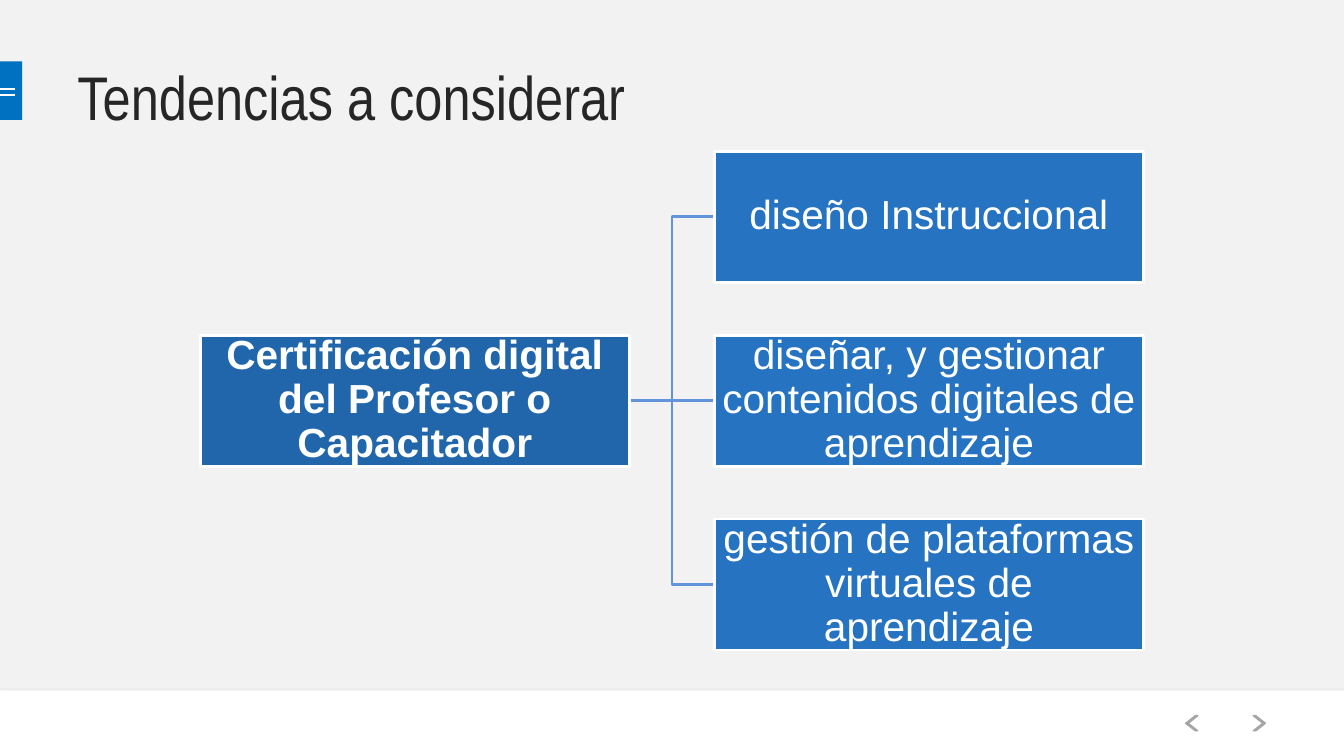
from lxml.etree import SubElement
from pptx import Presentation
from pptx.dml.color import RGBColor
from pptx.enum.shapes import MSO_CONNECTOR, MSO_SHAPE
from pptx.enum.text import MSO_ANCHOR, PP_ALIGN
from pptx.oxml import parse_xml
from pptx.oxml.ns import nsdecls, qn
from pptx.util import Inches, Pt

BACKGROUND = RGBColor(0xF2, 0xF2, 0xF2)
WHITE = RGBColor(0xFF, 0xFF, 0xFF)
TITLE_COLOR = RGBColor(0x26, 0x26, 0x26)
TAB_BLUE = RGBColor(0x00, 0x70, 0xC0)
ROOT_BLUE = RGBColor(0x21, 0x66, 0xAB)
BRANCH_BLUE = RGBColor(0x25, 0x73, 0xC1)
LINK_BLUE = RGBColor(0x63, 0x93, 0xDA)
CHEVRON_FILL = RGBColor(0x2E, 0x79, 0x74)
CHEVRON_LINE = RGBColor(0xA6, 0xA6, 0xA6)

BOX_WIDTH, BOX_HEIGHT = 4.25, 1.3
ROOT_TEXT = "Certificación digital del Profesor o Capacitador"
BRANCH_TEXTS = [
    "diseño Instruccional",
    "diseñar, y gestionar contenidos digitales de aprendizaje",
    "gestión de plataformas virtuales de aprendizaje",
]
FOOTER_SHADOW = (
    f'<a:effectLst {nsdecls("a")}><a:outerShdw blurRad="39370" dist="22860" dir="5400000" '
    'rotWithShape="0"><a:srgbClr val="808080"><a:alpha val="35000"/></a:srgbClr>'
    '</a:outerShdw></a:effectLst>'
)


def add_block(slide, kind, left, top, width, height, fill, line=None, line_width=1):
    """Add a flat filled shape, outlined only when a line colour is given."""
    shape = slide.shapes.add_shape(
        kind, Inches(left), Inches(top), Inches(width), Inches(height))
    shape.shadow.inherit = False
    shape.fill.solid()
    shape.fill.fore_color.rgb = fill
    if line is None:
        shape.line.fill.background()
    else:
        shape.line.color.rgb = line
        shape.line.width = Pt(line_width)
    return shape


def add_line(slide, kind, color, width, start=(0, 0), end=(0, 0)):
    """Add a connector without a shadow."""
    connector = slide.shapes.add_connector(kind, *map(Inches, start + end))
    connector.line.color.rgb = color
    connector.line.width = Pt(width)
    SubElement(connector._element.spPr, qn("a:effectLst"))
    return connector


def add_side_tab(slide, left, top, width, height):
    """Add the blue tab with its two white strokes."""
    add_block(slide, MSO_SHAPE.RECTANGLE, left, top, width, height, TAB_BLUE)
    for offset in (0.27, 0.33):
        y = top + offset
        add_line(slide, MSO_CONNECTOR.STRAIGHT, WHITE, 1.5, (left, y), (left + 0.15, y))


def add_footer(slide, left, top, width, height):
    """Add the white footer band with the two navigation chevrons."""
    band = add_block(slide, MSO_SHAPE.RECTANGLE, left, top, width, height, WHITE)
    properties = band._element.spPr
    properties.replace(properties.find(qn("a:effectLst")), parse_xml(FOOTER_SHADOW))
    for offset, rotation in ((11.76, 180), (12.43, 0)):
        chevron = add_block(slide, MSO_SHAPE.CHEVRON, left + offset, top + 0.25,
                            0.12, 0.15, CHEVRON_FILL, CHEVRON_LINE)
        chevron.adjustments[0] = 0.793
        chevron.rotation = rotation


def add_title(slide, left, top, width, height):
    """Add the slide title."""
    box = slide.shapes.add_textbox(Inches(left), Inches(top), Inches(width), Inches(height))
    frame = box.text_frame
    frame.word_wrap = True
    frame.vertical_anchor = MSO_ANCHOR.MIDDLE
    frame.text = "Tendencias a considerar"
    font = frame.paragraphs[0].runs[0].font
    font.name = "Arial Narrow"
    font.size = Pt(44)
    font.color.rgb = TITLE_COLOR


def add_node(slide, left, top, text, fill, bold=False):
    """Add one labelled box of the hierarchy."""
    node = add_block(slide, MSO_SHAPE.RECTANGLE, left, top, BOX_WIDTH, BOX_HEIGHT,
                     fill, WHITE, 2)
    frame = node.text_frame
    frame.word_wrap = True
    frame.vertical_anchor = MSO_ANCHOR.MIDDLE
    frame.margin_left = frame.margin_right = Inches(0.02)
    frame.margin_top = frame.margin_bottom = Inches(0.02)
    frame.text = text
    paragraph = frame.paragraphs[0]
    paragraph.alignment = PP_ALIGN.CENTER
    paragraph.line_spacing = 0.9
    font = paragraph.runs[0].font
    font.name = "Arial"
    font.size = Pt(29)
    font.bold = bold
    font.color.rgb = WHITE
    return node


def add_hierarchy(slide, left, top, width, height):
    """Add the root box, its branches and the links between them."""
    middle = (len(BRANCH_TEXTS) - 1) / 2
    pitch = (height - BOX_HEIGHT) / (len(BRANCH_TEXTS) - 1)
    root = add_node(slide, left, top + middle * pitch, ROOT_TEXT, ROOT_BLUE, bold=True)
    for index, text in enumerate(BRANCH_TEXTS):
        branch = add_node(slide, left + width - BOX_WIDTH, top + index * pitch,
                          text, BRANCH_BLUE)
        kind = MSO_CONNECTOR.STRAIGHT if index == middle else MSO_CONNECTOR.ELBOW
        link = add_line(slide, kind, LINK_BLUE, 2)
        link.begin_connect(root, 3)
        link.end_connect(branch, 1)
        root._element.addprevious(link._element)


def main():
    """Build and save the presentation."""
    presentation = Presentation()
    presentation.slide_width = Inches(13.33)
    presentation.slide_height = Inches(7.5)
    slide = presentation.slides.add_slide(presentation.slide_layouts[6])
    slide.background.fill.solid()
    slide.background.fill.fore_color.rgb = BACKGROUND
    add_side_tab(slide, 0, 0.61, 0.22, 0.58)
    add_footer(slide, 0, 6.85, 13.33, 0.68)
    add_title(slide, 0.67, 0.64, 11.11, 0.62)
    add_hierarchy(slide, 1.99, 1.5, 9.35, 4.95)
    presentation.save("out.pptx")


if __name__ == "__main__":
    main()
